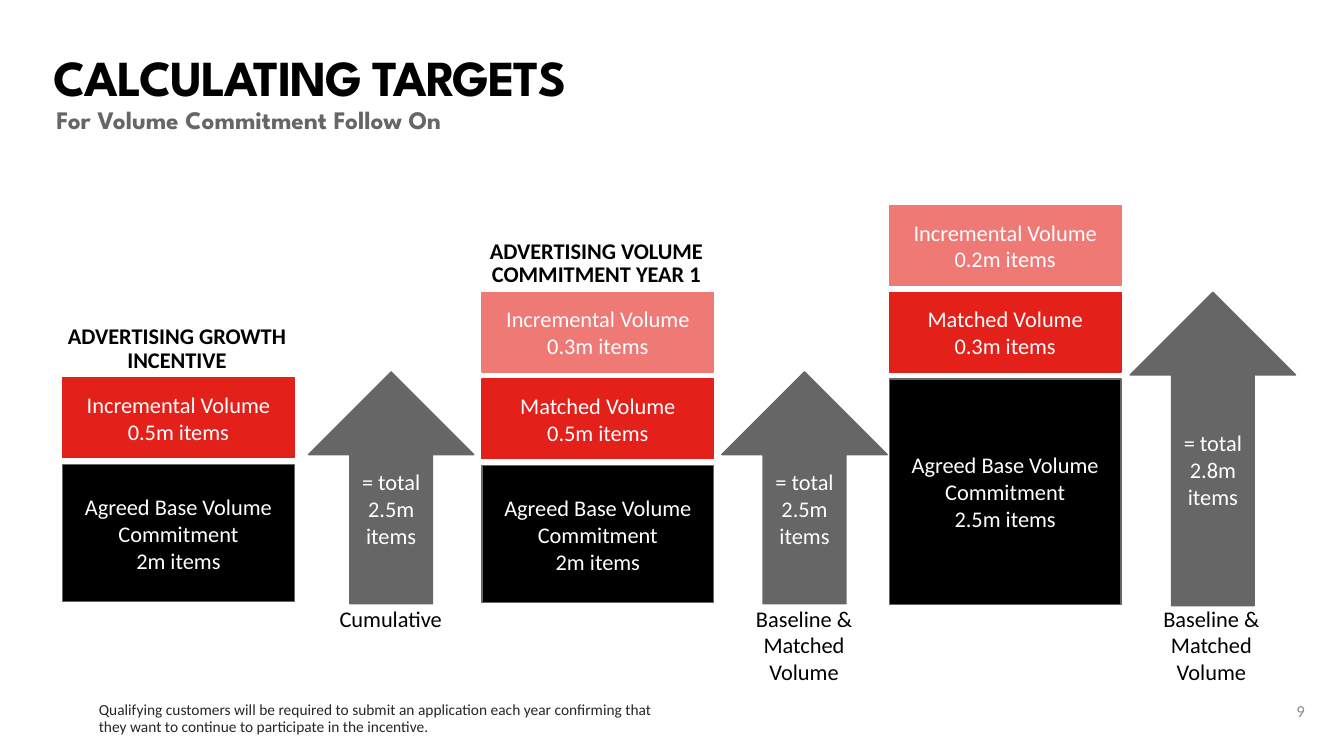
from pptx import Presentation
from pptx.dml.color import RGBColor
from pptx.enum.shapes import MSO_SHAPE as Shape
from pptx.enum.text import MSO_ANCHOR as Anchor, PP_ALIGN as Align
from pptx.oxml.ns import qn
from pptx.util import Inches, Pt

BLACK = RGBColor(0x00, 0x00, 0x00)
WHITE = RGBColor(0xFF, 0xFF, 0xFF)
GREY = RGBColor(0x66, 0x66, 0x66)
PALE = RGBColor(0x8C, 0x8C, 0x8C)
INK = RGBColor(0x26, 0x26, 0x26)
RED = RGBColor(0xE3, 0x20, 0x19)
PINK = RGBColor(0xEE, 0x79, 0x75)
HEAD_FONT = "League Spartan"

# Content
TITLE = "CALCULATING TARGETS"
SUB = "For Volume Commitment Follow On"
NOTE = ("Qualifying customers will be required to submit an application each year "
        "confirming that they want to continue to participate in the incentive.")
PAGE = "9"
BASE = "Agreed Base Volume Commitment"
MATCH = "Matched Volume"
EXTRA = "Incremental Volume"

# Left, top of base, height of base, heading, blocks from the base upward
STACKS = [
    (0.62, 4.61, 1.36, ["ADVERTISING GROWTH", "INCENTIVE"],
     [(BASE, "2m items", BLACK), (EXTRA, "0.5m items", RED)]),
    (4.78, 4.62, 1.36, ["ADVERTISING VOLUME", "COMMITMENT YEAR 1"],
     [(BASE, "2m items", BLACK), (MATCH, "0.5m items", RED),
      (EXTRA, "0.3m items", PINK)]),
    (8.82, 3.76, 2.24, [],
     [(BASE, "2.5m items", BLACK), (MATCH, "0.3m items", RED),
      (EXTRA, "0.2m items", PINK)]),
]

# Left, top, height, total, label left, label height, label, label alignment
SHARED = ["Baseline & Matched", "Volume"]
ARROWS = [
    (3.06, 3.69, 2.3, "= total 2.5m items", 3.27, 0.37, ["Cumulative"], Align.LEFT),
    (7.16, 3.69, 2.3, "= total 2.5m items", 7.34, 0.91, SHARED, Align.CENTER),
    (11.21, 2.9, 3.11, "= total 2.8m items", 11.38, 0.91, SHARED, Align.CENTER),
]

# Sizes shared by the stacks and arrows
STACK_W, BLOCK_H, GAP = 2.3, 0.79, 0.07
HEAD_W, HEAD_H, HEAD_RISE, HEAD_SHIFT = 2.49, 0.58, 0.57, 0.11
ARROW_W, LABEL_W, LABEL_TOP = 1.64, 1.27, 5.95

deck = Presentation()
deck.slide_width, deck.slide_height = Inches(13.33), Inches(7.5)
slide = deck.slides.add_slide(deck.slide_layouts.get_by_name("Two Content"))


def write(shape, lines, size=16, color=WHITE, font="Calibri", bold=False,
          align=Align.CENTER, anchor=Anchor.TOP, space=None, inset=None,
          plain=False, track=None):
    frame = shape.text_frame
    frame.word_wrap = True
    frame.vertical_anchor = anchor
    if inset is not None:
        frame.margin_left = frame.margin_right = Inches(inset)
        frame.margin_top = frame.margin_bottom = 0
    frame.text = "\n".join(lines)
    for para in frame.paragraphs:
        if plain:
            props = para._p.get_or_add_pPr()
            props.set("marL", "0")
            props.set("indent", "0")
            props.append(props.makeelement(qn("a:buNone"), {}))
            para.space_before = 0
        para.alignment = align
        if space:
            para.line_spacing = space
        for run in para.runs:
            run.font.name, run.font.size = font, Pt(size)
            run.font.bold, run.font.color.rgb = bold, color
            if track:
                run._r.get_or_add_rPr().set("spc", str(track))


def place(shape, left, top, width, height):
    shape.left, shape.top = Inches(left), Inches(top)
    shape.width, shape.height = Inches(width), Inches(height)
    return shape


def add_text(left, top, width, height, lines, **style):
    box = slide.shapes.add_textbox(0, 0, 0, 0)
    write(place(box, left, top, width, height), lines, **style)


def add_block(kind, left, top, width, height, lines, fill, edge):
    block = slide.shapes.add_shape(kind, Inches(left), Inches(top),
                                   Inches(width), Inches(height))
    block.shadow.inherit = False
    block.fill.solid()
    block.fill.fore_color.rgb = fill
    block.line.color.rgb = edge
    block.line.width = Pt(1)
    write(block, lines, anchor=Anchor.MIDDLE)


# Title, subtitle, footnote and page number
title, sub, note = slide.placeholders
write(place(title, 0.53, 0.45, 11.01, 0.52), [TITLE], size=36, color=BLACK,
      font=HEAD_FONT, bold=True, align=Align.LEFT, space=Pt(44), inset=0, track=-100)
write(place(sub, 0.56, 1.07, 10.98, 0.31), [SUB], size=18, color=GREY,
      font=HEAD_FONT, bold=True, align=Align.LEFT, space=0.9, inset=0, plain=True)
write(place(note, 0.88, 6.97, 5.7, 0.15), [NOTE], size=11, color=INK,
      align=Align.LEFT, space=0.9, inset=0.1, plain=True)
add_text(12.63, 6.85, 0.41, 0.4, [PAGE], size=12, color=PALE,
         align=Align.RIGHT, anchor=Anchor.MIDDLE)

# Stacks of volume blocks, each with its heading on top
for left, base_top, base_h, heading, blocks in STACKS:
    for step, (name, amount, fill) in enumerate(blocks):
        top = base_top - step * (BLOCK_H + GAP)
        add_block(Shape.RECTANGLE, left, top, STACK_W, BLOCK_H if step else base_h,
                  [name, amount], fill, fill if step else GREY)
    if heading:
        add_text(left - HEAD_SHIFT, top - HEAD_RISE, HEAD_W, HEAD_H, heading,
                 color=BLACK, bold=True, space=Pt(17))

# Arrows with totals, and the labels below them
for left, top, height, total, label_x, label_h, label, align in ARROWS:
    add_block(Shape.UP_ARROW, left, top, ARROW_W, height, [total], GREY, GREY)
    add_text(label_x, LABEL_TOP, LABEL_W, label_h, label, color=BLACK, align=align)

deck.save("out.pptx")
